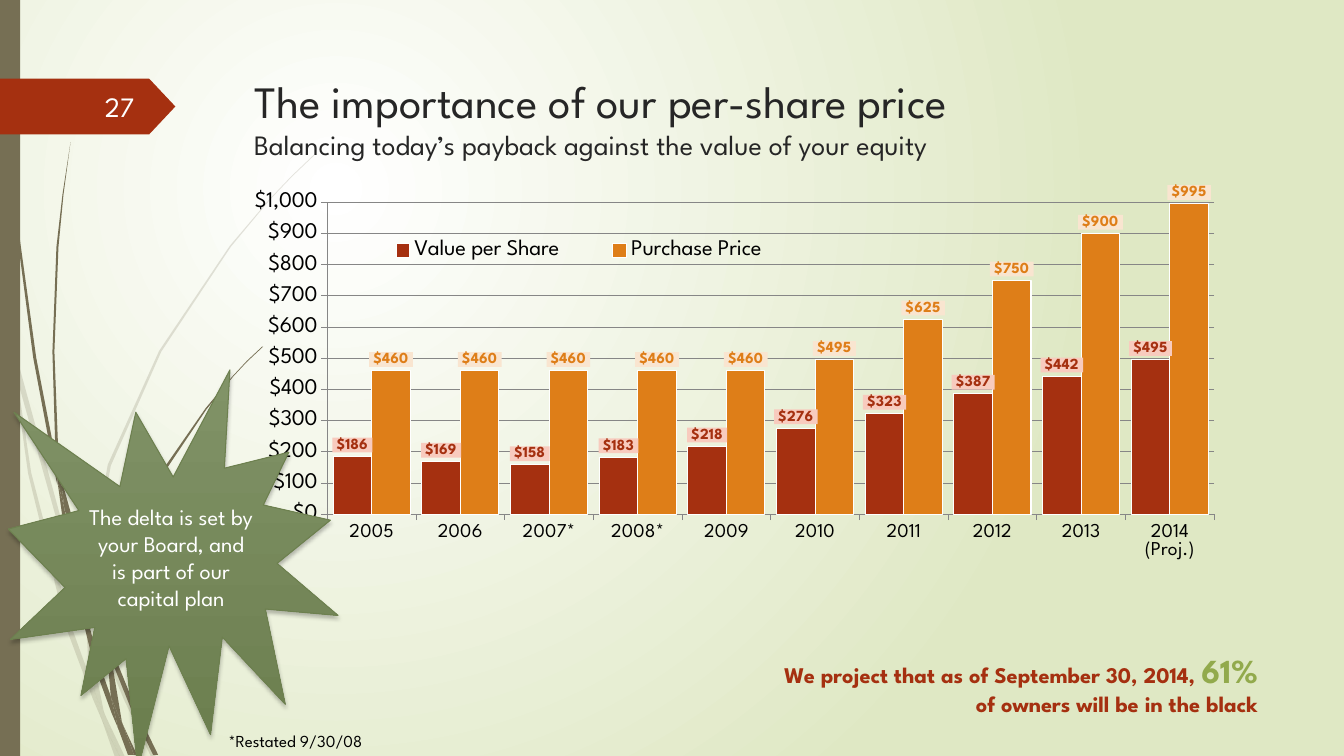
from lxml import etree
from pptx import Presentation
from pptx import util as u
from pptx.chart.data import CategoryChartData
from pptx.dml.color import RGBColor
from pptx.enum import chart as charts, shapes, text
from pptx.oxml import parse_xml
from pptx.oxml.ns import nsdecls, qn

FONT = "League Spartan"
COLORS = {"rust": "A53010", "orange": "DE7E18", "lime": "92AA4C", "bark": "766F54",
          "ink": "262626", "black": "000000", "white": "FFFFFF", "mist": "DFE8C4",
          "moss": "819367", "fern": "6A7D4D", "edge": "6D804F", "grid": "868686",
          "pale_rust": "F8CBBE", "pale_orange": "F9E5D0"}
BLADE_UNIT = u.Cm(.0254)
PALE_BLADES = [
    [(11, 350), (9, 322), (0, 282), (0, 299), (10, 344)],
    [(58, 522), (84, 599), (85, 586), (62, 520), (14, 345), (17, 376)],
    [(92, 607), (88, 596), (88, 610), (123, 694), (150, 751), (155, 751), (127, 692)],
    [(119, 751), (124, 751), (105, 711)],
    [(93, 683), (70, 619), (31, 469), (17, 376), (11, 350), (28, 470), (65, 621), (92, 693),
     (101, 714), (99, 707)],
    [(84, 599), (87, 646), (93, 683), (96, 692), (105, 711), (103, 706), (91, 646), (88, 610),
     (88, 608)],
    [(88, 584), (110, 462), (160, 349), (229, 245), (268, 198), (290, 175), (312, 154),
     (312, 153), (289, 175), (268, 197), (228, 244), (158, 348), (107, 461), (85, 584),
     (85, 586), (88, 596)],
    [(101, 714), (114, 751), (119, 751)],
    [(88, 608), (88, 610), (88, 596), (85, 586), (84, 599)],
    [(96, 692), (93, 683), (99, 707), (101, 714), (119, 751), (105, 711)],
]
DARK_BLADES = [
    [(7, 110), (17, 233), (33, 355), (56, 477), (57, 481), (55, 457), (55, 453), (36, 355),
     (19, 232), (8, 109), (5, 48), (4, 0), (3, 0), (4, 48)],
    [(88, 592), (106, 645), (106, 633), (106, 631), (93, 590), (60, 472), (64, 505)],
    [(113, 649), (110, 641), (111, 656), (132, 708), (152, 749), (157, 749), (136, 706)],
    [(110, 691), (98, 657), (72, 556), (64, 505), (57, 477), (68, 557), (93, 659), (111, 708),
     (117, 722), (116, 717)],
    [(60, 472), (58, 453), (54, 349), (58, 245), (63, 193), (70, 141), (62, 193), (56, 245),
     (52, 349), (55, 449)],
    [(133, 749), (136, 749), (122, 719)],
    [(57, 477), (64, 505), (60, 472), (55, 449), (55, 453)],
    [(111, 633), (125, 552), (158, 476), (205, 406), (231, 374), (245, 359), (261, 344),
     (260, 344), (245, 358), (231, 373), (204, 405), (156, 474), (122, 551), (106, 631),
     (110, 641)],
    [(117, 722), (127, 749), (131, 749)],
    [(106, 645), (110, 691), (116, 706), (122, 719), (121, 716), (111, 656), (109, 651)],
    [(106, 645), (109, 651), (111, 656), (110, 641), (106, 631), (106, 633)],
    [(116, 706), (110, 691), (116, 717), (117, 722), (130, 749), (133, 749), (122, 719)],
]
YEARS = ["2005", "2006", "2007*", "2008*", "2009", "2010", "2011", "2012", "2013",
         "2014 (Proj.)"]
SERIES = [
    ("Value per Share", [186, 169, 158, 183, 218, 276, 323, 387, 442, 495], "rust"),
    ("Purchase Price", [460, 460, 460, 460, 460, 495, 625, 750, 900, 995], "orange"),
]


def rgb(name):
    """Return the named colour."""
    return RGBColor.from_string(COLORS[name])


def style(font, size, color, bold=False):
    """Format a font."""
    font.name, font.size, font.bold = FONT, u.Pt(size), bold
    font.color.rgb = rgb(color)


def gradient(fill, *names):
    """Apply a two-colour gradient."""
    fill.gradient()
    for stop, name in zip(fill.gradient_stops, names):
        stop.color.rgb = rgb(name)


def paint(shape, color):
    """Give a shape a flat fill without line or shadow."""
    shape.shadow.inherit = False
    shape.fill.solid()
    shape.fill.fore_color.rgb = rgb(color)
    shape.line.fill.background()


def add_background(page):
    """Draw the radial background."""
    gradient(page.background.fill, "white", "mist")
    linear = next(page._element.iter(qn("a:lin")))
    linear.getparent().replace(linear, parse_xml(
        f'<a:path {nsdecls("a")} path="circle">'
        '<a:fillToRect l="50000" t="50000" r="100000" b="100000"/></a:path>'))


def add_side_decor(page, left, top, height):
    """Draw the grass and the side stripe."""
    for blades, alpha in ((PALE_BLADES, 20), (DARK_BLADES, 100)):
        for start, *others in blades:
            builder = page.shapes.build_freeform(*start, scale=BLADE_UNIT)
            builder.add_line_segments(others, close=True)
            blade = builder.convert_to_shape(u.Cm(left), u.Cm(top))
            paint(blade, "bark")
            if alpha < 100:
                shade = next(blade._element.spPr.iter(qn("a:srgbClr")))
                etree.SubElement(shade, qn("a:alpha"), val=str(alpha * 1000))
    stripe = page.shapes.add_shape(shapes.MSO_SHAPE.RECTANGLE, *map(u.Cm, (left, top, .51, height)))
    paint(stripe, "bark")


def add_text(page, box, spans, align, anchor):
    """Add one paragraph of formatted spans."""
    frame = page.shapes.add_textbox(*map(u.Cm, box)).text_frame
    frame.word_wrap, frame.vertical_anchor = True, anchor
    para = frame.paragraphs[0]
    para.alignment = align
    for words, size, color, bold in spans:
        span = para.add_run()
        span.text = words
        style(span.font, size, color, bold)


def add_page_flag(page, left, top, width, height):
    """Draw the page number on its flag."""
    flag = page.shapes.add_shape(shapes.MSO_SHAPE.PENTAGON, *map(u.Cm, (left, top, width, height)))
    flag.adjustments[0] = .47
    paint(flag, "rust")
    add_text(page, (left + 1.48, top + .2, 2.16, 1.02), [("27", 20, "white", False)],
             text.PP_ALIGN.RIGHT, text.MSO_ANCHOR.MIDDLE)


def add_title(page, left, top, width, height):
    """Place the title and its subtitle line."""
    title = page.shapes.title
    title._element.getparent().append(title._element)
    title.left, title.top, title.width, title.height = map(u.Cm, (left, top, width, height))
    frame = title.text_frame
    frame.text = ("The importance of our per-share price\v"
                  "Balancing today’s payback against the value of your equity")
    frame.vertical_anchor = text.MSO_ANCHOR.TOP
    para = frame.paragraphs[0]
    para.alignment = text.PP_ALIGN.LEFT
    for span, size in zip(para.runs, (32, 20)):
        style(span.font, size, "ink")


def manual_layout(parent, index, x, y, w, h, inner=False):
    """Fix the place of a chart part."""
    for old in parent.findall(qn("c:layout")):
        parent.remove(old)
    target = '<c:layoutTarget val="inner"/>' if inner else ""
    values = "".join(f'<c:{key} val="{value}"/>' for key, value in zip("xywh", (x, y, w, h)))
    parent.insert(index, parse_xml(
        f'<c:layout {nsdecls("c")}><c:manualLayout>{target}<c:xMode val="edge"/>'
        f'<c:yMode val="edge"/>{values}</c:manualLayout></c:layout>'))


def add_price_chart(page, left, top, width, height):
    """Chart value per share against purchase price."""
    data = CategoryChartData()
    data.categories = YEARS
    for name, values, _ in SERIES:
        data.add_series(name, values)
    chart = page.shapes.add_chart(charts.XL_CHART_TYPE.COLUMN_CLUSTERED,
                                  *map(u.Cm, (left, top, width, height)), data).chart
    style(chart.font, 18, "black")
    chart.has_title = False
    chart.has_legend = True
    legend = chart.legend
    legend.position = charts.XL_LEGEND_POSITION.BOTTOM
    legend.include_in_layout = False
    style(legend.font, 16, "black")
    manual_layout(legend._element, 1, .1, .16, .47, .08)
    plot = chart.plots[0]
    plot.gap_width, plot.overlap, plot.vary_by_categories = 30, 0, False
    manual_layout(plot._element.getparent(), 0, .077, .083, .91, .758, inner=True)
    prices = chart.value_axis
    prices.minimum_scale, prices.maximum_scale, prices.major_unit = 0, 1000, 100
    prices.has_major_gridlines = True
    prices.major_gridlines.format.line.color.rgb = rgb("grid")
    prices.tick_labels.number_format = "\\$#,##0"
    prices.tick_labels.number_format_is_linked = False
    for axis, size in ((prices, 16), (chart.category_axis, 14)):
        axis.major_tick_mark = charts.XL_TICK_MARK.OUTSIDE
        axis.format.line.color.rgb = rgb("grid")
        style(axis.tick_labels.font, size, "black")
    for series, (_, _, color) in zip(plot.series, SERIES):
        series.format.fill.solid()
        series.format.fill.fore_color.rgb = rgb(color)
        series.format.line.color.rgb = rgb("white")
        series.format.line.width = u.Pt(.75)
        labels = series.data_labels
        labels.show_value = True
        labels.number_format = '_("$"* #,##0_);_("$"* \\(#,##0\\)'
        labels.number_format_is_linked = False
        labels.position = charts.XL_LABEL_POSITION.OUTSIDE_END
        style(labels.font, 11, color, True)
        labels._element.find(qn("c:txPr")).addprevious(parse_xml(
            f'<c:spPr {nsdecls("c", "a")}><a:solidFill>'
            f'<a:srgbClr val="{COLORS["pale_" + color]}"/></a:solidFill></c:spPr>'))


def add_burst(page, left, top, width, height):
    """Draw the starburst remark."""
    burst = page.shapes.add_shape(shapes.MSO_SHAPE.EXPLOSION1,
                                  *map(u.Cm, (left, top, width, height)))
    gradient(burst.fill, "moss", "fern")
    burst.fill.gradient_angle = 270
    burst.line.color.rgb, burst.line.width = rgb("edge"), u.Pt(.75)
    burst.shadow.inherit = False
    burst._element.spPr.find(qn("a:effectLst")).append(parse_xml(
        f'<a:outerShdw {nsdecls("a")} blurRad="38100" dist="25400" dir="5400000">'
        '<a:srgbClr val="000000"><a:alpha val="25000"/></a:srgbClr></a:outerShdw>'))
    frame = burst.text_frame
    frame.text = "The delta is set by your Board, and is part of our capital plan"
    frame.word_wrap, frame.vertical_anchor = True, text.MSO_ANCHOR.MIDDLE
    para = frame.paragraphs[0]
    para.alignment = text.PP_ALIGN.CENTER
    style(para.runs[0].font, 16, "white")


def main():
    """Build and save the deck."""
    deck = Presentation()
    deck.slide_width, deck.slide_height = u.Cm(33.87), u.Cm(19.05)
    page = deck.slides.add_slide(deck.slide_layouts[5])
    add_background(page)
    add_side_decor(page, 0, 0, 19.05)
    add_page_flag(page, 0, 1.98, 4.42, 1.41)
    add_text(page, (19.05, 15.86, 12.9, 2.34),
             [("We project that as of September 30, 2014, ", 16, "rust", True),
              ("61%", 24, "lime", True), (" of owners will be in the black", 16, "rust", True)],
             text.PP_ALIGN.RIGHT, text.MSO_ANCHOR.BOTTOM)
    add_title(page, 6.15, 1.73, 25.81, 3.12)
    add_price_chart(page, 6.36, 4.24, 24.56, 10.37)
    add_text(page, (5.51, 18.29, 7.82, .76), [("*Restated 9/30/08", 12, "black", False)],
             text.PP_ALIGN.LEFT, text.MSO_ANCHOR.TOP)
    add_burst(page, .21, 9.32, 8.31, 10.06)
    deck.save("out.pptx")


if __name__ == "__main__":
    main()
